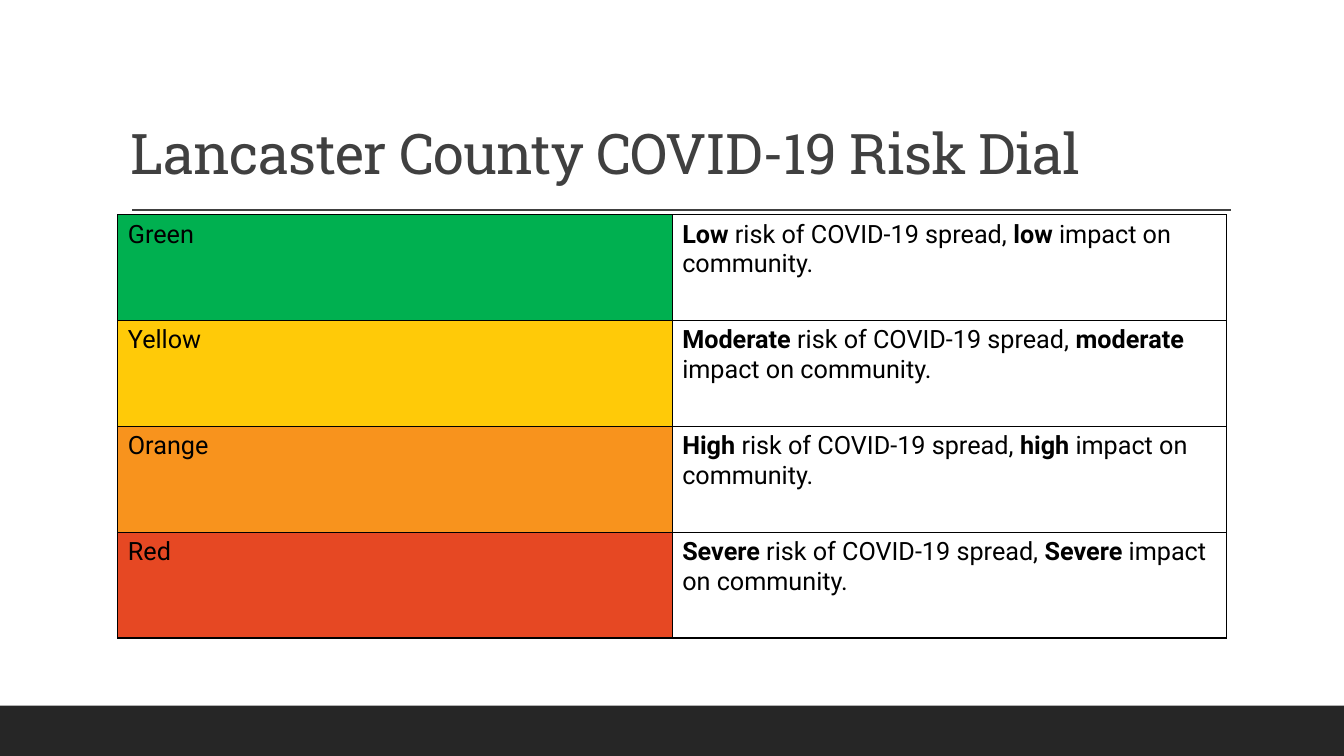
from lxml import etree
from pptx import Presentation
from pptx.dml.color import RGBColor
from pptx.enum.shapes import MSO_CONNECTOR, MSO_SHAPE
from pptx.enum.text import MSO_ANCHOR
from pptx.oxml.ns import qn
from pptx.util import Cm, Pt

STRAIGHT = MSO_CONNECTOR.STRAIGHT
RECTANGLE = MSO_SHAPE.RECTANGLE
BOTTOM = MSO_ANCHOR.BOTTOM

BLACK = RGBColor(0x00, 0x00, 0x00)
CHARCOAL = RGBColor(0x26, 0x26, 0x26)
GRAY = RGBColor(0x40, 0x40, 0x40)
GREEN = RGBColor(0x00, 0xB0, 0x50)
YELLOW = RGBColor(0xFF, 0xCA, 0x08)
ORANGE = RGBColor(0xF8, 0x93, 0x1D)
RED = RGBColor(0xE6, 0x48, 0x23)

PAGE_WIDTH, PAGE_HEIGHT = Cm(33.87), Cm(19.05)
FOOTER_HEIGHT = Cm(1.27)

RISK_LEVELS = [
    ("Green", GREEN, "Low", "low"),
    ("Yellow", YELLOW, "Moderate", "moderate"),
    ("Orange", ORANGE, "High", "high"),
    ("Red", RED, "Severe", "Severe"),
]


def add_span(para, text, font="Roboto", size=18, color=BLACK, bold=False, spacing=None):
    span = para.add_run()
    span.text = text
    span.font.name = font
    span.font.size = Pt(size)
    span.font.bold = bold
    span.font.color.rgb = color
    if spacing is not None:
        span.font._element.set("spc", str(int(spacing * 100)))


def add_footer(page, left, top, width, height):
    band = page.shapes.add_shape(RECTANGLE, left, top, width, height)
    band.shadow.inherit = False
    band.fill.solid()
    band.fill.fore_color.rgb = CHARCOAL
    band.line.fill.background()


def add_title(page, left, top, width, height):
    box = page.shapes.add_textbox(left, top, width, height)
    box.text_frame.word_wrap = True
    box.text_frame.vertical_anchor = BOTTOM
    para = box.text_frame.paragraphs[0]
    para.line_spacing = 0.9
    add_span(para, "Lancaster County COVID-19 Risk Dial",
             font="Roboto Slab", size=40, color=GRAY, spacing=-0.5)

    rule_left, rule_top = left + Cm(0.28), top + height + Cm(0.46)
    rule = page.shapes.add_connector(
        STRAIGHT, rule_left, rule_top, rule_left + Cm(27.69), rule_top)
    rule.line.color.rgb = GRAY
    rule.line.width = Pt(1)
    etree.SubElement(rule._element.spPr, qn("a:effectLst"))


def add_borders(cell):
    properties = cell._tc.get_or_add_tcPr()
    for side in ("lnL", "lnR", "lnT", "lnB"):
        border = etree.SubElement(properties, qn(f"a:{side}"), w=str(Pt(1)))
        fill = etree.SubElement(border, qn("a:solidFill"))
        etree.SubElement(fill, qn("a:srgbClr"), val=str(BLACK))


def add_risk_table(page, left, top, width, height):
    table = page.shapes.add_table(len(RISK_LEVELS), 2, left, top, width, height).table
    table.first_row = False
    table.horz_banding = False
    for row, (name, color, risk, impact) in enumerate(RISK_LEVELS):
        label, description = table.cell(row, 0), table.cell(row, 1)
        for cell in (label, description):
            add_borders(cell)
        label.fill.solid()
        label.fill.fore_color.rgb = color
        description.fill.background()

        add_span(label.text_frame.paragraphs[0], name)
        para = description.text_frame.paragraphs[0]
        add_span(para, risk, bold=True)
        add_span(para, " risk of COVID-19 spread, ")
        add_span(para, impact, bold=True)
        add_span(para, " impact on community.")


def main():
    deck = Presentation()
    deck.slide_width, deck.slide_height = PAGE_WIDTH, PAGE_HEIGHT
    page = deck.slides.add_slide(deck.slide_layouts[6])
    add_footer(page, 0, PAGE_HEIGHT - FOOTER_HEIGHT, PAGE_WIDTH, FOOTER_HEIGHT)
    add_title(page, Cm(3.05), Cm(0.79), Cm(27.94), Cm(4.04))
    add_risk_table(page, Cm(2.97), Cm(5.41), Cm(27.94), Cm(10.67))
    deck.save("out.pptx")


if __name__ == "__main__":
    main()
